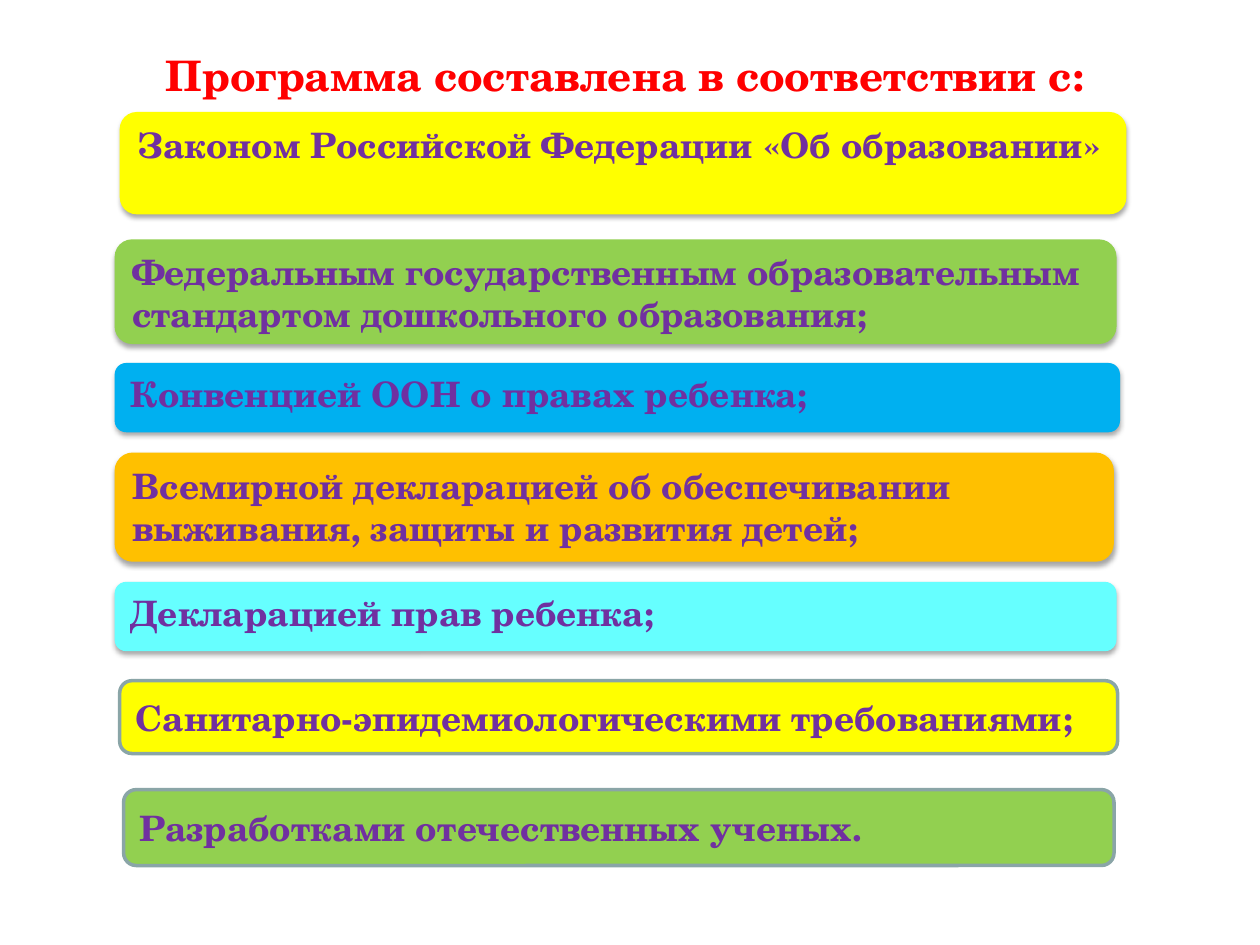
from dataclasses import dataclass

from lxml.etree import SubElement
from pptx import Presentation
from pptx.dml.color import RGBColor as Color
from pptx.enum.shapes import MSO_SHAPE as Shape
from pptx.enum.text import MSO_ANCHOR as Anchor, PP_ALIGN as Align
from pptx.oxml.ns import qn
from pptx.util import Pt


@dataclass(frozen=True)
class Theme:
    font: str = "TeX Gyre Schola"
    title_size: int = 24
    text_size: int = 20
    title: str = "FF0000"
    text: str = "7030A0"
    border: str = "8AA5A7"
    shadow: str = "000000"
    yellow: str = "FFFF00"
    green: str = "92D050"
    blue: str = "00B0F0"
    orange: str = "FFC000"
    cyan: str = "66FFFF"


THEME = Theme()

# Left, top, width, height in points, fill, bordered, text
DOCUMENTS = [
    (68.4, 64, 575.3, 58.5, THEME.yellow, False,
     "Законом Российской Федерации «Об образовании»"),
    (65.5, 136.8, 572.5, 59.8, THEME.green, False,
     "Федеральным государственным образовательным стандартом дошкольного образования;"),
    (65.5, 207.4, 574.5, 39.6, THEME.blue, False,
     "Конвенцией ООН о правах ребенка;"),
    (65.5, 258.6, 571, 62.4, THEME.orange, False,
     "Всемирной декларацией об обеспечивании выживания, защиты и развития детей;"),
    (65.5, 332.5, 572.5, 39.6, THEME.cyan, False,
     "Декларацией прав ребенка;"),
    (68.4, 389, 570.2, 41.6, THEME.yellow, True,
     "Санитарно-эпидемиологическими требованиями;"),
    (70.6, 451.2, 566, 43.4, THEME.green, True,
     "Разработками отечественных ученых."),
]


def place(shape, left, top, width, height):
    shape.left, shape.top = Pt(left), Pt(top)
    shape.width, shape.height = Pt(width), Pt(height)


def write(para, text, size, color, align):
    para.text = text
    para.alignment = align
    font = para.font
    font.name, font.size, font.bold = THEME.font, Pt(size), True
    font.color.rgb = Color.from_string(color)


def add_title(page, text):
    title = page.shapes.title
    place(title, 33, -14.4, 648, 90)
    frame = title.text_frame
    frame.word_wrap = True
    frame.vertical_anchor = Anchor.MIDDLE
    frame.margin_top = Pt(28)
    write(frame.paragraphs[0], text, THEME.title_size, THEME.title, Align.CENTER)


def add_soft_shadow(shape):
    effects = shape._element.spPr.find(qn("a:effectLst"))
    shadow = SubElement(effects, qn("a:outerShdw"), blurRad=str(Pt(3.1)),
                        dist=str(Pt(1.8)), dir="5400000", rotWithShape="0")
    color = SubElement(shadow, qn("a:srgbClr"), val=THEME.shadow)
    SubElement(color, qn("a:alpha"), val="35000")


def add_document(page, left, top, width, height, fill, bordered, text):
    box = page.shapes.add_shape(Shape.ROUNDED_RECTANGLE, Pt(left), Pt(top),
                                Pt(width), Pt(height))
    box.fill.solid()
    box.fill.fore_color.rgb = Color.from_string(fill)
    box.shadow.inherit = False
    if bordered:
        box.line.color.rgb = Color.from_string(THEME.border)
        box.line.width = Pt(2)
    else:
        box.line.fill.background()
        add_soft_shadow(box)
    frame = box.text_frame
    frame.word_wrap = True
    frame.vertical_anchor = Anchor.MIDDLE if bordered else Anchor.TOP
    write(frame.paragraphs[0], text, THEME.text_size, THEME.text, Align.LEFT)


def main():
    deck = Presentation()
    deck.slide_width, deck.slide_height = Pt(720), Pt(540)
    page = deck.slides.add_slide(deck.slide_layouts[5])

    # Heading
    add_title(page, "Программа составлена в соответствии с:")

    # Founding documents, one bar each
    for document in DOCUMENTS:
        add_document(page, *document)

    deck.save("out.pptx")


if __name__ == "__main__":
    main()
